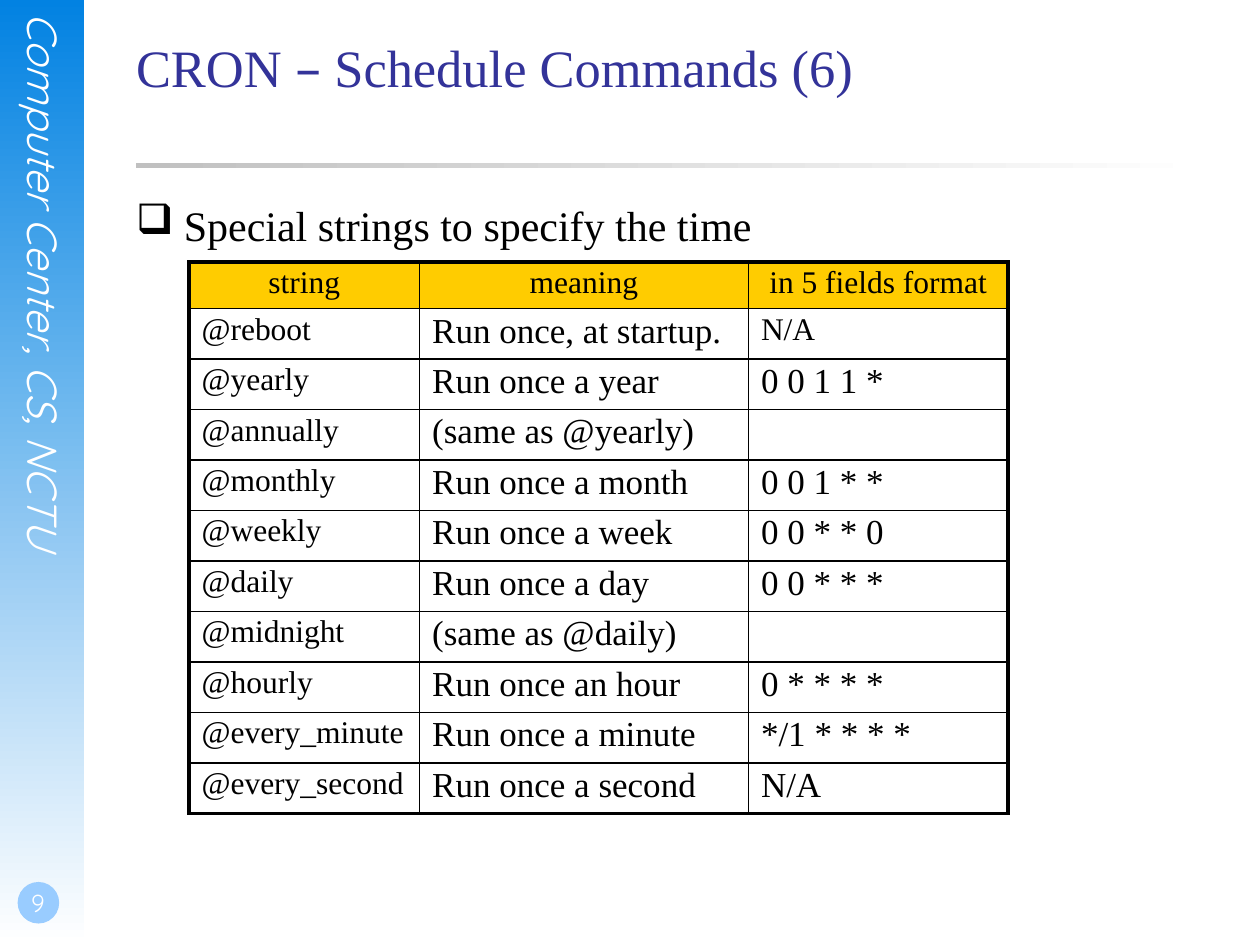
from dataclasses import dataclass

from lxml import etree
from pptx import Presentation
from pptx.dml.color import RGBColor
from pptx.enum.shapes import MSO_SHAPE
from pptx.enum.text import MSO_ANCHOR, MSO_AUTO_SIZE, PP_ALIGN
from pptx.oxml.ns import qn
from pptx.util import Inches, Pt

RECTANGLE, OVAL = MSO_SHAPE.RECTANGLE, MSO_SHAPE.OVAL
LEFT, CENTER = PP_ALIGN.LEFT, PP_ALIGN.CENTER
TOP, BOTTOM = MSO_ANCHOR.TOP, MSO_ANCHOR.BOTTOM
FIT_SHAPE = MSO_AUTO_SIZE.SHAPE_TO_FIT_TEXT


@dataclass(frozen=True)
class Theme:
    font: str = "Times New Roman"
    dash_font: str = "DejaVu Sans"
    side_font: str = "Quicksand"
    title: str = "333399"
    text: str = "000000"
    white: str = "FFFFFF"
    sidebar: str = "0282E2"
    badge: str = "99CCFF"
    rule: str = "C0C0C0"
    header: str = "FFCC00"
    title_size: float = 30
    body_size: float = 24
    cell_size: float = 20
    label_size: float = 18
    number_size: float = 14
    outer_line: float = 2.25
    inner_line: float = 1


HEADERS = ["string", "meaning", "in 5 fields format"]
SCHEDULES = [
    ["@reboot", "Run once, at startup.", "N/A"],
    ["@yearly", "Run once a year", "0 0 1 1 *"],
    ["@annually", "(same as @yearly)", ""],
    ["@monthly", "Run once a month", "0 0 1 * *"],
    ["@weekly", "Run once a week", "0 0 * * 0"],
    ["@daily", "Run once a day", "0 0 * * *"],
    ["@midnight", "(same as @daily)", ""],
    ["@hourly", "Run once an hour", "0 * * * *"],
    ["@every_minute", "Run once a minute", "*/1 * * * *"],
    ["@every_second", "Run once a second", "N/A"],
]
COLUMN_WIDTHS = [1.83, 2.61, 2.06]
HEADER_HEIGHT, ROW_HEIGHT = 0.37, 0.4


def add_run(paragraph, text, *, size, color, font, italic=False):
    run = paragraph.add_run()
    run.text = text
    run.font.size = Pt(size)
    run.font.name = font
    run.font.italic = italic
    run.font.color.rgb = RGBColor.from_string(color)


def add_bullet(paragraph, character, indent):
    """Give a hanging bullet and a quarter line of space before."""
    properties = paragraph._p.get_or_add_pPr()
    properties.set("marL", str(Inches(indent)))
    properties.set("indent", str(-Inches(indent)))
    spacing = etree.SubElement(properties, qn("a:spcBef"))
    etree.SubElement(spacing, qn("a:spcPct"), val="25000")
    etree.SubElement(properties, qn("a:buChar"), char=character)


def set_borders(cell, color, widths):
    """Draw the left, right, top and bottom borders, in that order."""
    properties = cell._tc.get_or_add_tcPr()
    for side, width in zip("LRTB", widths):
        line = etree.SubElement(properties, qn(f"a:ln{side}"), w=str(Pt(width)))
        fill = etree.SubElement(line, qn("a:solidFill"))
        etree.SubElement(fill, qn("a:srgbClr"), val=color)


class SlideBuilder:
    def __init__(self, slide, theme):
        self.slide = slide
        self.theme = theme

    def shape(self, kind, box, color, gradient_angle=None):
        """Add a plain shape, fading to white if an angle is given."""
        shape = self.slide.shapes.add_shape(kind, *map(Inches, box))
        shape.shadow.inherit = False
        shape.line.fill.background()
        if gradient_angle is None:
            shape.fill.solid()
            shape.fill.fore_color.rgb = RGBColor.from_string(color)
        else:
            shape.fill.gradient()
            shape.fill.gradient_angle = gradient_angle
            for stop, value in zip(shape.fill.gradient_stops, (color, self.theme.white)):
                stop.color.rgb = RGBColor.from_string(value)

    def text(self, box, runs, *, size, color, italic=False, align=LEFT, anchor=TOP,
             margins=(0, 0, 0, 0), vertical=False, bullet=None):
        """Add a one-paragraph text box; runs are (text, font) pairs."""
        frame = self.slide.shapes.add_textbox(*map(Inches, box)).text_frame
        frame.word_wrap = True
        frame.vertical_anchor = anchor
        (frame.margin_left, frame.margin_top,
         frame.margin_right, frame.margin_bottom) = map(Inches, margins)
        if vertical:
            frame.auto_size = FIT_SHAPE
            frame._txBody.bodyPr.set("vert", "eaVert")
        paragraph = frame.paragraphs[0]
        paragraph.alignment = align
        if bullet:
            add_bullet(paragraph, bullet, 0.38)
        for text, font in runs:
            add_run(paragraph, text, size=size, color=color, font=font, italic=italic)

    def table(self, left, top, rows):
        theme = self.theme
        heights = [HEADER_HEIGHT] + [ROW_HEIGHT] * (len(rows) - 1)
        frame = self.slide.shapes.add_table(
            len(rows), len(COLUMN_WIDTHS), Inches(left), Inches(top),
            Inches(sum(COLUMN_WIDTHS)), Inches(sum(heights)))
        table = frame.table
        table.first_row = table.horz_banding = False
        for column, width in zip(table.columns, COLUMN_WIDTHS):
            column.width = Inches(width)
        last_row, last_column = len(rows) - 1, len(COLUMN_WIDTHS) - 1
        for i, values in enumerate(rows):
            table.rows[i].height = Inches(heights[i])
            for j, value in enumerate(values):
                edges = (j == 0, j == last_column, i == 0, i == last_row)
                widths = [theme.outer_line if edge else theme.inner_line for edge in edges]
                small = i == 0 or j == 0 or (i, j) == (1, last_column)
                self.cell(table.cell(i, j), value, widths, is_header=i == 0,
                          size=theme.label_size if small else theme.cell_size)

    def cell(self, cell, value, border_widths, *, is_header, size):
        set_borders(cell, self.theme.text, border_widths)
        if is_header:
            cell.fill.solid()
            cell.fill.fore_color.rgb = RGBColor.from_string(self.theme.header)
        else:
            cell.fill.background()
        paragraph = cell.text_frame.paragraphs[0]
        paragraph.line_spacing = 0.9
        paragraph.alignment = CENTER if is_header else LEFT
        if value:
            add_run(paragraph, value, size=size, color=self.theme.text, font=self.theme.font)


def main():
    presentation = Presentation()
    presentation.slide_width, presentation.slide_height = Inches(10), Inches(7.5)
    theme = Theme()
    builder = SlideBuilder(presentation.slides.add_slide(presentation.slide_layouts[6]), theme)

    builder.shape(RECTANGLE, (0, 0, 0.67, 7.5), theme.sidebar, gradient_angle=270)
    builder.text((0.15, 0.1, 0.4, 5.11), [("Computer Center, CS, NCTU", theme.side_font)],
                 size=theme.body_size, color=theme.white, italic=True, vertical=True)
    builder.shape(OVAL, (0.14, 7, 0.33, 0.33), theme.badge)
    builder.text((0, 6.83, 0.58, 0.5), [("9", theme.side_font)], size=theme.number_size,
                 color=theme.white, align=CENTER, anchor=BOTTOM, margins=(0.02, 0, 0, 0.05))

    builder.shape(RECTANGLE, (1.08, 1.29, 8.5, 0.04), theme.rule, gradient_angle=0)
    builder.text((1.08, 0.28, 8.5, 1.25),
                 [("CRON ", theme.font), ("–", theme.dash_font),
                  (" Schedule Commands (6)", theme.font)],
                 size=theme.title_size, color=theme.title)
    builder.text((1.08, 1.58, 8.5, 5.08), [("Special strings to specify the time", theme.font)],
                 size=theme.body_size, color=theme.text, bullet="❑")
    builder.table(1.5, 2.08, [HEADERS] + SCHEDULES)
    presentation.save("out.pptx")


if __name__ == "__main__":
    main()
